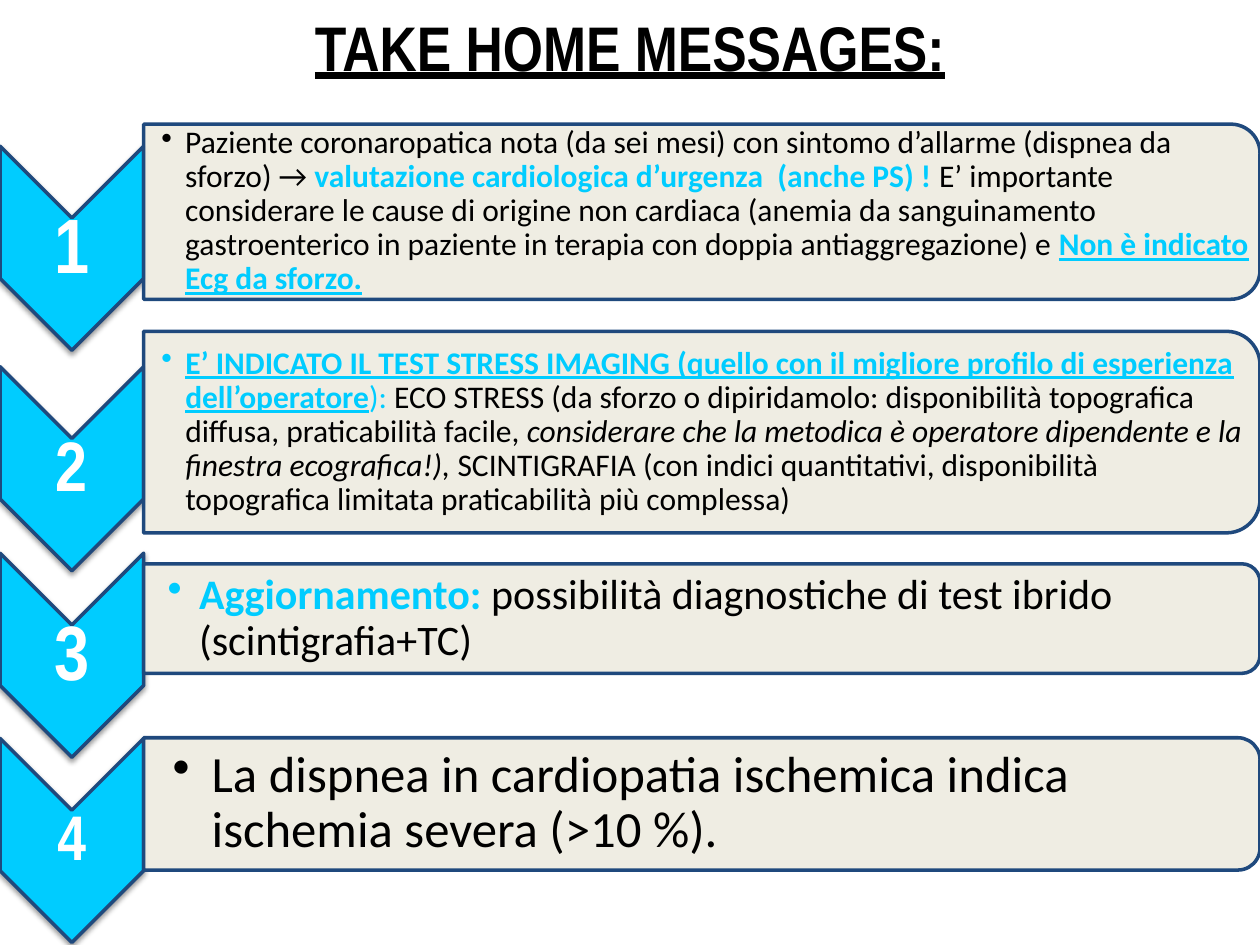
from lxml.etree import SubElement
from pptx import Presentation
from pptx.dml.color import RGBColor
from pptx.enum.shapes import MSO_SHAPE
from pptx.enum.text import MSO_ANCHOR, PP_ALIGN
from pptx.oxml.ns import qn
from pptx.util import Inches, Pt

CYAN, NAVY, BEIGE, BLACK, WHITE = "00CCFF", "1F497D", "EEECE1", "000000", "FFFFFF"
COLUMN_W, PANEL_W = 1.14, 8.86
CHEVRON_H, NUMBER_H = 1.62, 0.49
KEY = dict(color=CYAN, bold=True)
KEY_LINE = dict(KEY, underline=True)

MESSAGES = [
    dict(chevron_y=1.97, panel_y=1.68, panel_h=1.39, text_w=8.8, number_size=44,
         size=18, inset=0.14, indent=0.19, runs=[
             ("Paziente coronaropatica nota (da sei mesi) con sintomo d’allarme "
              "(dispnea da sforzo) → ", {}),
             ("valutazione cardiologica d’urgenza  (anche PS) ! ", KEY),
             ("E’ importante considerare le cause di origine non cardiaca (anemia da "
              "sanguinamento gastroenterico in paziente in terapia con doppia "
              "antiaggregazione) e ", {}),
             ("Non è indicato Ecg da sforzo.", KEY_LINE)]),
    dict(chevron_y=3.72, panel_y=3.43, panel_h=1.6, text_w=8.79, number_size=40,
         size=18, inset=0.14, indent=0.19, runs=[
             ("E’ INDICATO IL TEST STRESS IMAGING (quello con il migliore profilo di "
              "esperienza dell’operatore", KEY_LINE),
             ("): ", dict(color=CYAN)),
             ("ECO STRESS (da sforzo o dipiridamolo: disponibilità topografica diffusa, "
              "praticabilità facile, ", {}),
             ("considerare che la metodica è operatore dipendente e la finestra "
              "ecografica!), ", dict(italic=True)),
             ("SCINTIGRAFIA (con indici quantitativi, disponibilità topografica limitata "
              "praticabilità più complessa)", {})]),
    dict(chevron_y=5.2, panel_y=4.91, panel_h=0.87, text_w=8.82, number_size=44,
         size=24, inset=0.19, indent=0.25, runs=[
             ("Aggiornamento:", KEY),
             (" possibilità diagnostiche di test ibrido (scintigrafia+TC)", {})]),
    dict(chevron_y=6.67, panel_y=6.38, panel_h=1.05, text_w=8.81, number_size=36,
         size=29, inset=0.23, indent=0.31, runs=[
             ("La dispnea in cardiopatia ischemica indica ischemia severa (>10 %).", {})]),
]


def rgb(color):
    """Turn a hex string into a colour."""
    return RGBColor.from_string(color)


def add_run(p, text, size, font="Calibri", color=BLACK, bold=False, italic=False,
            underline=False):
    """Append a formatted run to a paragraph."""
    r = p.add_run()
    r.text = text
    f = r.font
    f.size, f.name, f.bold, f.italic, f.underline = Pt(size), font, bold, italic, underline
    f.color.rgb = rgb(color)


def add_turned_shape(s, kind, cx, cy, w, h, fill):
    """Add an outlined preset turned a quarter, w by h as seen, around its centre."""
    sp = s.shapes.add_shape(kind, Inches(cx - h / 2), Inches(cy - w / 2),
                            Inches(h), Inches(w))
    sp.rotation = 90
    sp.shadow.inherit = False
    sp.fill.solid()
    sp.fill.fore_color.rgb = rgb(fill)
    sp.line.color.rgb = rgb(NAVY)
    sp.line.width = Pt(2)
    return sp


def add_alpha(parent, percent):
    """Give a colour element an opacity."""
    SubElement(parent, qn("a:alpha"), val=str(percent * 1000))


def add_shadow(sp):
    """Give a shape a soft shadow below it."""
    effects = sp._element.spPr.find(qn("a:effectLst"))
    shadow = SubElement(effects, qn("a:outerShdw"), blurRad=str(Pt(3.1)),
                        dist=str(Pt(1.6)), dir="5400000", rotWithShape="0")
    add_alpha(SubElement(shadow, qn("a:srgbClr"), val=BLACK), 38)


def add_text(s, x, cy, w, h, left, inset):
    """Add a text box centred on cy and return its first paragraph."""
    tf = s.shapes.add_textbox(Inches(x), Inches(cy - h / 2), Inches(w), Inches(h)).text_frame
    tf.word_wrap = True
    tf.vertical_anchor = MSO_ANCHOR.MIDDLE
    tf.margin_left = Inches(left)
    tf.margin_top = tf.margin_right = tf.margin_bottom = Inches(inset)
    p = tf.paragraphs[0]
    p.line_spacing = 0.9
    return p


def add_bullet(p, indent):
    """Make a paragraph a bullet with a hanging indent."""
    p.level = 1
    pPr = p._p.get_or_add_pPr()
    pPr.set("marL", str(Inches(indent)))
    pPr.set("indent", str(-Inches(indent)))
    SubElement(pPr, qn("a:buChar"), char="•")


def add_title(s, text):
    """Place and fill the title."""
    sp = s.shapes.title
    sp.left, sp.top, sp.width, sp.height = Inches(0.5), 0, Inches(9), Inches(0.74)
    tf = sp.text_frame
    tf.vertical_anchor = MSO_ANCHOR.MIDDLE
    p = tf.paragraphs[0]
    p.alignment = PP_ALIGN.CENTER
    add_run(p, text, 36, "Arial Narrow", bold=True, underline=True)


def add_number(s, number, cy, size):
    """Add a numbered chevron pointing down."""
    sp = add_turned_shape(s, MSO_SHAPE.CHEVRON, COLUMN_W / 2, cy, COLUMN_W, CHEVRON_H, CYAN)
    add_shadow(sp)
    p = add_text(s, 0, cy, COLUMN_W, NUMBER_H, 0.03, 0.03)
    p.alignment = PP_ALIGN.CENTER
    add_run(p, str(number), size, "Arial Narrow", WHITE, bold=True)


def add_panel(s, message):
    """Add a panel rounded on the right with its bulleted message."""
    cy, h = message["panel_y"], message["panel_h"]
    sp = add_turned_shape(s, MSO_SHAPE.ROUND_2_SAME_RECTANGLE, COLUMN_W + PANEL_W / 2, cy,
                          PANEL_W, h, BEIGE)
    add_alpha(sp._element.spPr.find(qn("a:solidFill"))[0], 90)
    p = add_text(s, COLUMN_W, cy, message["text_w"], h - 0.12, message["inset"], 0.01)
    add_bullet(p, message["indent"])
    for text, style in message["runs"]:
        add_run(p, text, message["size"], **style)


def main():
    """Build the slide and save it."""
    prs = Presentation()
    prs.slide_width, prs.slide_height = Inches(10), Inches(7.5)
    s = prs.slides.add_slide(prs.slide_layouts[5])
    add_title(s, "TAKE HOME MESSAGES:")
    for number, message in enumerate(MESSAGES, 1):
        add_number(s, number, message["chevron_y"], message["number_size"])
        add_panel(s, message)
    prs.save("out.pptx")


if __name__ == "__main__":
    main()
